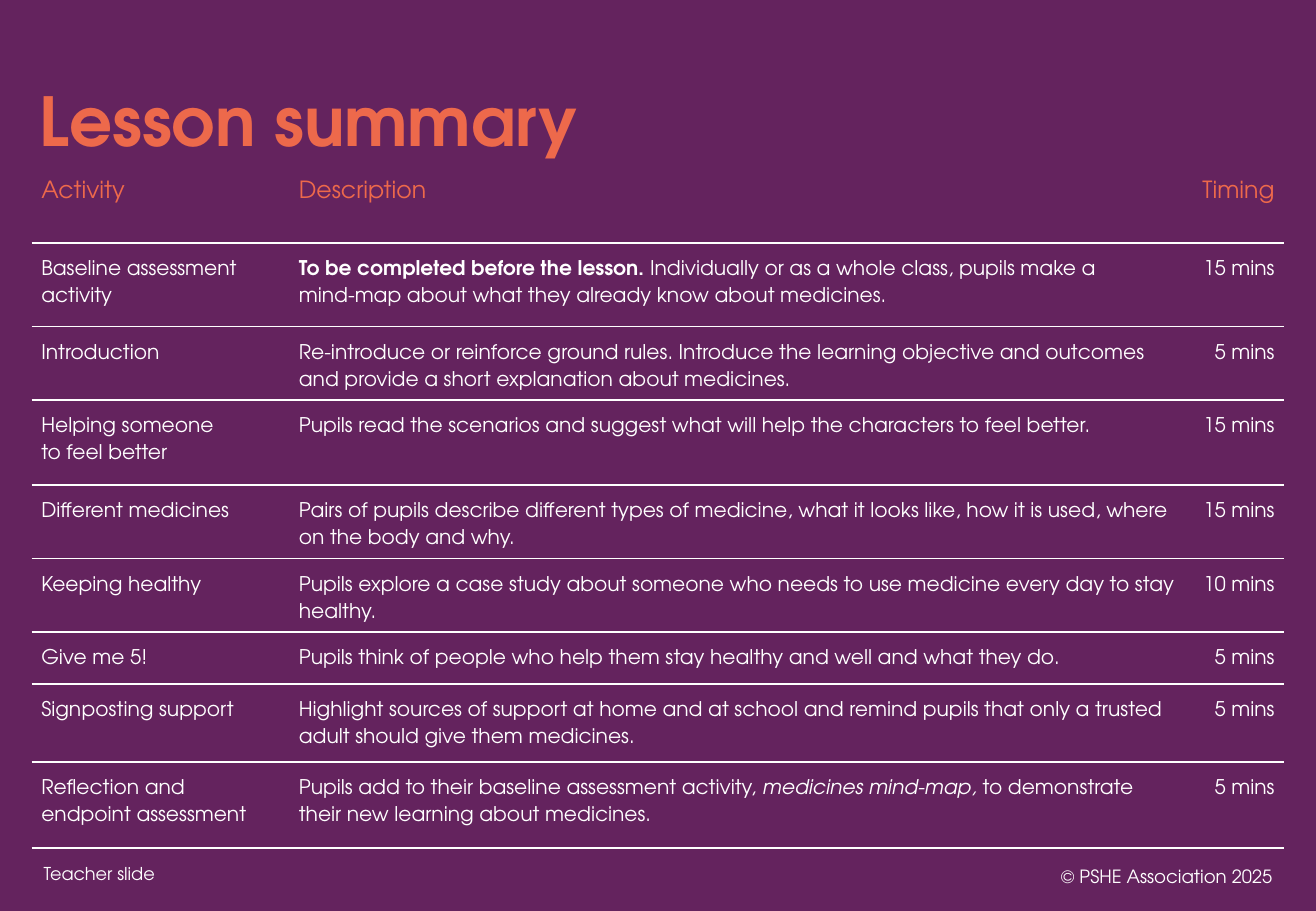
from dataclasses import dataclass

from lxml.etree import SubElement
from pptx import Presentation
from pptx.dml.color import RGBColor
from pptx.enum.text import MSO_ANCHOR as Anchor, PP_ALIGN as Align
from pptx.oxml import parse_xml
from pptx.oxml.ns import nsdecls, qn
from pptx.util import Inches, Pt


@dataclass(frozen=True)
class Theme:
    font: str = "TeX Gyre Adventor"
    background: str = "64235E"
    accent: str = "ED694B"
    text: str = "FFFFFF"
    title: float = 40
    header: float = 14
    body: float = 12
    footer: float = 10.5
    copyright: float = 10.8


THEME = Theme()
NO_GRID_STYLE = "{2D5ABB26-0587-4C30-8999-92F81FD0307C}"
HEADERS = ("Activity", "Description", "Timing")
COLUMN_WIDTHS = (2.04, 7.46, 0.81)
COLUMN_ALIGNS = (Align.LEFT, Align.LEFT, Align.RIGHT)
HEADER_HEIGHT = 0.59

# Row height, activity, description pieces with their style, minutes
ACTIVITIES = [
    (0.69, "Baseline assessment activity",
     [("To be completed before the lesson.", "bold"),
      (" Individually or as a whole class, pupils make a\n"
       "mind-map about what they already know about medicines.", "")], 15),
    (0.6, "Introduction",
     [("Re-introduce or reinforce ground rules. Introduce the learning objective "
       "and outcomes and provide a short explanation about medicines.", "")], 5),
    (0.7, "Helping someone\nto feel better",
     [("Pupils read the scenarios and suggest what will help the characters "
       "to feel better.", "")], 15),
    (0.6, "Different medicines",
     [("Pairs of pupils describe different types of medicine, what it looks like, "
       "how it is used, where on the body and why.", "")], 15),
    (0.6, "Keeping healthy",
     [("Pupils explore a case study about someone who needs to use medicine "
       "every day to stay healthy.", "")], 10),
    (0.43, "Give me 5!",
     [("Pupils think of people who help them stay healthy and well "
       "and what they do.", "")], 5),
    (0.64, "Signposting support",
     [("Highlight sources of support at home and at school and remind pupils "
       "that only a trusted adult should give them medicines.", "")], 5),
    (0.71, "Reflection and\nendpoint assessment",
     [("Pupils add to their baseline assessment activity, ", ""),
      ("medicines mind-map,", "italic"),
      (" to demonstrate their new learning about medicines.", "")], 5),
]


def format_font(font, size, color, bold=False, italic=False):
    font.name = THEME.font
    font.size = Pt(size)
    font.color.rgb = RGBColor.from_string(color)
    font.bold = bold
    font.italic = italic


def add_label(s, box, text, size, color, align=Align.LEFT, anchor=Anchor.TOP, bold=False):
    tf = s.shapes.add_textbox(*map(Inches, box)).text_frame
    tf.word_wrap = True
    tf.vertical_anchor = anchor
    tf.text = text
    p = tf.paragraphs[0]
    p.alignment = align
    format_font(p.runs[0].font, size, color, bold)
    return p


def add_pieces(p, pieces, size, color):
    """Add styled runs, turning each newline into a line break."""
    for text, style in pieces:
        for i, line in enumerate(text.split("\n")):
            if i:
                p.add_line_break()
            r = p.add_run()
            r.text = line
            format_font(r.font, size, color, style == "bold", style == "italic")


def add_bottom_border(cell):
    ln = parse_xml(f'<a:lnB {nsdecls("a")} w="{Pt(1)}"/>')
    fill = SubElement(ln, qn("a:solidFill"))
    SubElement(fill, qn("a:srgbClr"), val=THEME.text)
    cell._tc.get_or_add_tcPr().insert(0, ln)


def fill_cell(cell, column, pieces, size, color, spacing=None):
    cell.margin_left = Inches(0.16 if column == 1 else 0.08)
    cell.margin_right = cell.margin_top = cell.margin_bottom = Inches(0.08)
    cell.fill.background()
    add_bottom_border(cell)
    p = cell.text_frame.paragraphs[0]
    p.alignment = COLUMN_ALIGNS[column]
    p.line_spacing = spacing
    add_pieces(p, pieces, size, color)


def add_summary_table(s):
    heights = [HEADER_HEIGHT] + [activity[0] for activity in ACTIVITIES]
    frame = s.shapes.add_table(
        len(heights), len(HEADERS), Inches(0.26), Inches(1.41),
        Inches(sum(COLUMN_WIDTHS)), Inches(sum(heights)))
    table = frame.table
    table.horz_banding = False
    table._tbl.tblPr.find(qn("a:tableStyleId")).text = NO_GRID_STYLE
    for column, width in zip(table.columns, COLUMN_WIDTHS):
        column.width = Inches(width)
    for row, height in zip(table.rows, heights):
        row.height = Inches(height)
    for c, header in enumerate(HEADERS):
        fill_cell(table.cell(0, c), c, [(header, "")], THEME.header, THEME.accent)
    for r, (_, activity, description, minutes) in enumerate(ACTIVITIES, 1):
        contents = ([(activity, "")], description, [(f"{minutes} mins", "")])
        for c, pieces in enumerate(contents):
            fill_cell(table.cell(r, c), c, pieces, THEME.body, THEME.text, Pt(16))


def main():
    prs = Presentation()
    prs.slide_width, prs.slide_height = Inches(10.83), Inches(7.5)
    s = prs.slides.add_slide(prs.slide_layouts[6])
    s.background.fill.solid()
    s.background.fill.fore_color.rgb = RGBColor.from_string(THEME.background)

    title = add_label(s, (0.23, 0.65, 8.2, 0.76), "Lesson summary", THEME.title,
                      THEME.accent, anchor=Anchor.MIDDLE, bold=True)
    title.line_spacing = 0.9
    add_summary_table(s)
    add_label(s, (0.26, 7.05, 6.78, 0.29), "Teacher slide", THEME.footer, THEME.text)
    add_label(s, (8.13, 7.01, 2.44, 0.4), "© PSHE Association 2025", THEME.copyright,
              THEME.text, Align.RIGHT, Anchor.MIDDLE)
    prs.save("out.pptx")


if __name__ == "__main__":
    main()
